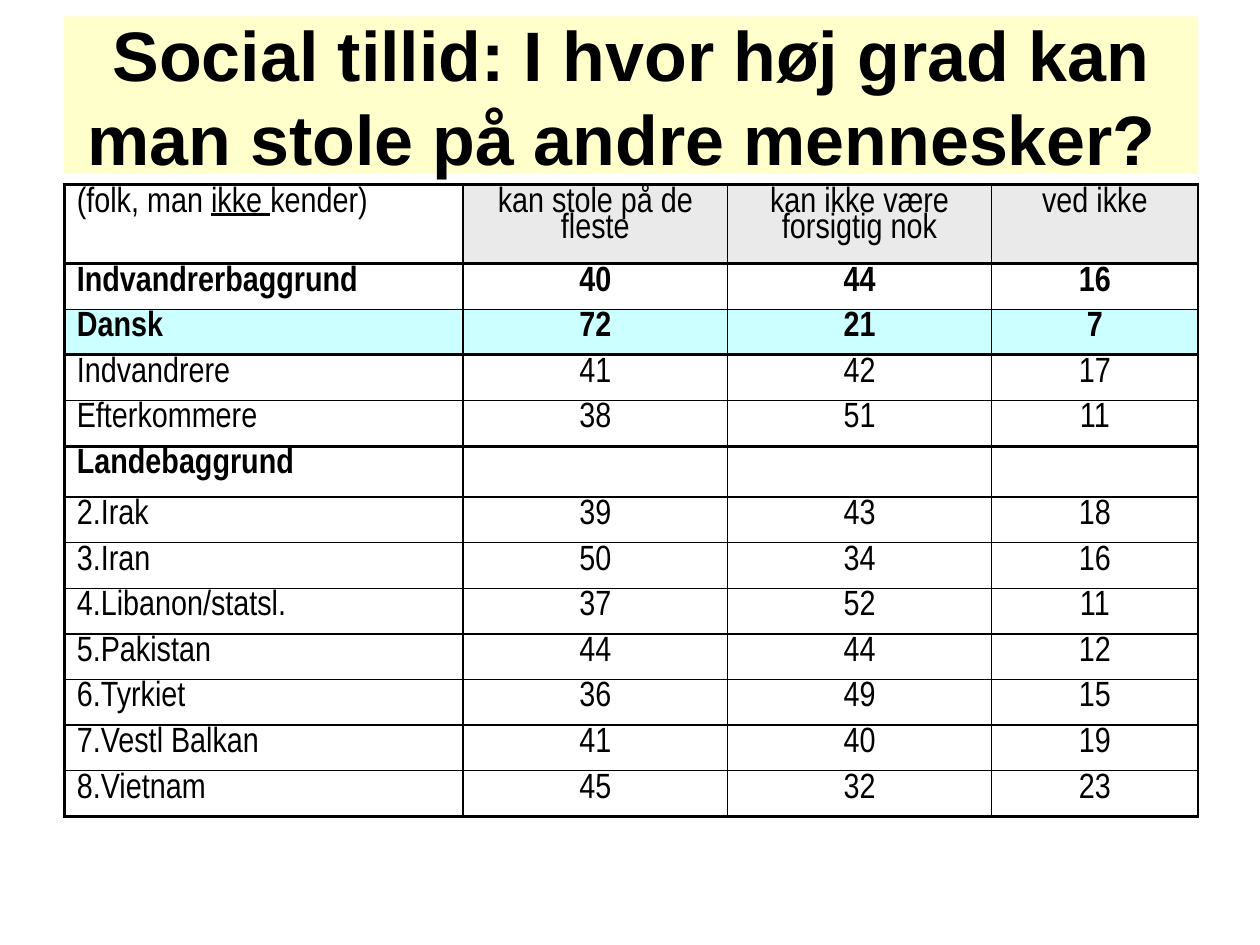
import pptx
import pptx.util
import pptx.dml.color
import pptx.enum.text
import pptx.oxml
import pptx.oxml.ns

Pt = pptx.util.Pt
RGB = pptx.dml.color.RGBColor
ALIGN = pptx.enum.text.PP_ALIGN

# Content
TITLE = "Social tillid: I hvor høj grad kan man stole på andre mennesker? "
NOTE = ("(folk, man ", "ikke ", "kender)")
ROWS = [
    ("", "kan stole på de\nfleste", "kan ikke være\nforsigtig nok", "ved ikke"),
    ("Indvandrerbaggrund", 40, 44, 16),
    ("Dansk", 72, 21, 7),
    ("Indvandrere", 41, 42, 17),
    ("Efterkommere", 38, 51, 11),
    ("Landebaggrund", "", "", ""),
    ("2.Irak", 39, 43, 18),
    ("3.Iran", 50, 34, 16),
    ("4.Libanon/statsl.", 37, 52, 11),
    ("5.Pakistan", 44, 44, 12),
    ("6.Tyrkiet", 36, 49, 15),
    ("7.Vestl Balkan", 41, 40, 19),
    ("8.Vietnam", 45, 32, 23),
]
BOLD = {1, 2, 5}
THICK = {0, 1, 3, 5, len(ROWS)}  # horizontal rules drawn at 2 pt

# Look
BLACK = RGB(0, 0, 0)
CREAM = RGB(0xFF, 0xFF, 0xCC)
GREY = RGB(0xEA, 0xEA, 0xEA)
CYAN = RGB(0xCC, 0xFF, 0xFF)
LEFT, WIDTH = 36.72, 648
COLS = (228, 151, 151, 118)
HEAD, LINE = 45.1, 26.06


def style(run, font, size, bold):
    run.font.name, run.font.size, run.font.bold = font, Pt(size), bold
    run.font.color.rgb = BLACK


def border(cell, side, width):
    line = pptx.oxml.parse_xml(
        f'<a:ln{side} {pptx.oxml.ns.nsdecls("a")} w="{Pt(width)}">'
        f'<a:solidFill><a:srgbClr val="{BLACK}"/></a:solidFill></a:ln{side}>')
    cell._tc.get_or_add_tcPr().append(line)


def shade(cell, row, col):
    color = CYAN if row == 2 else GREY if row == 0 and col else None
    if color is None:
        cell.fill.background()
    else:
        cell.fill.solid()
        cell.fill.fore_color.rgb = color


deck = pptx.Presentation()
deck.slide_width, deck.slide_height = Pt(720), Pt(540)
slide = deck.slides.add_slide(deck.slide_layouts[5])

# Title
title = slide.shapes.title
title.left, title.top, title.width, title.height = map(Pt, (LEFT, 9.36, WIDTH, 90))
title.fill.solid()
title.fill.fore_color.rgb = CREAM
frame = title.text_frame
frame.text = TITLE
frame.word_wrap = True
frame.auto_size = pptx.enum.text.MSO_AUTO_SIZE.NONE
frame.vertical_anchor = pptx.enum.text.MSO_ANCHOR.MIDDLE
frame.paragraphs[0].alignment = ALIGN.CENTER
style(frame.paragraphs[0].runs[0], "Arial", 40, True)

# Table
high = HEAD + LINE * (len(ROWS) - 1)
table = slide.shapes.add_table(
    len(ROWS), len(COLS), Pt(LEFT), Pt(105.6), Pt(WIDTH), Pt(high)).table
table.first_row = table.horz_banding = False
for col, width in enumerate(COLS):
    table.columns[col].width = Pt(width)

for row, values in enumerate(ROWS):
    table.rows[row].height = Pt(LINE if row else HEAD)
    for col, value in enumerate(values):
        cell = table.cell(row, col)
        cell.text_frame.text = str(value)
        if row == col == 0:
            for part in NOTE:
                run = cell.text_frame.paragraphs[0].add_run()
                run.text = part
                run.font.underline = part == NOTE[1]
        for para in cell.text_frame.paragraphs:
            para.alignment = ALIGN.CENTER if col else ALIGN.LEFT
            para.line_spacing = 0.8
            for run in para.runs:
                style(run, "Arial Narrow", 20, row in BOLD)
        border(cell, "L", 1 if col else 2)
        border(cell, "R", 1)
        border(cell, "T", 2 if row in THICK else 1)
        border(cell, "B", 2 if row + 1 in THICK else 1)
        shade(cell, row, col)

deck.save("out.pptx")
